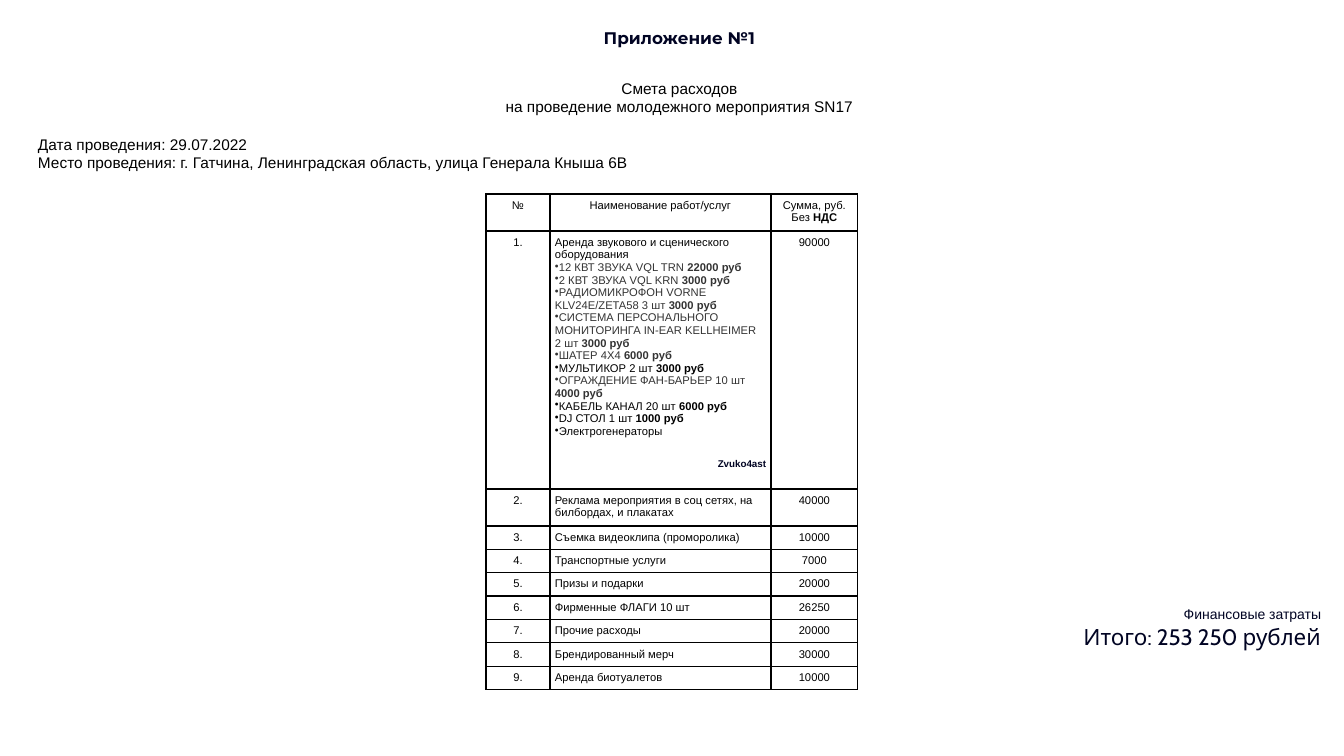
from pptx import Presentation
from pptx.dml.color import RGBColor
from pptx.enum.text import MSO_ANCHOR, PP_ALIGN as Align
from pptx.oxml.ns import qn
from pptx.util import Pt
from lxml.etree import SubElement

PX = 914400 / 100.8
COLORS = {"black": "000000", "gray": "333333", "navy": "010423", "white": "FFFFFF"}


def px(length):
    return round(length * PX)


def write(para, text, size, color="black", font="Arial", align=Align.LEFT, bold=""):
    """Fill a paragraph with plain text and an optional bold ending."""
    para.text = text
    para.alignment = align
    if bold:
        para.add_run().text = bold
    for index, span in enumerate(para.runs):
        span.font.size = Pt(size)
        span.font.name = font
        span.font.bold = index == 1
        span.font.color.rgb = RGBColor.from_string(COLORS[color])


deck = Presentation()
deck.slide_width, deck.slide_height = px(1344), px(756)
page = deck.slides.add_slide(deck.slide_layouts[6])

# Headings, event details and total: top, height, alignment, lines
TEXTS = [
    (28, 21, Align.CENTER, [("Приложение №1", 12, "navy", "Montserrat")]),
    (79, 37, Align.CENTER, [
        ("Смета расходов", 11, "black", "Arial"),
        ("на проведение молодежного мероприятия SN17", 11, "black", "Arial")]),
    (135, 37, Align.LEFT, [
        ("Дата проведения: 29.07.2022", 11, "black", "Arial"),
        ("Место проведения: г. Гатчина, Ленинградская область, улица Генерала Кныша 6В",
         11, "black", "Arial")]),
    (606, 44, Align.RIGHT, [
        ("Финансовые затраты", 10, "navy", "Arial"),
        ("Итого: 253 250 рублей", 16, "navy", "Cabin")]),
]
for top, height, align, lines in TEXTS:
    box = page.shapes.add_textbox(px(28), px(top), px(1303), px(height))
    frame = box.text_frame
    frame.word_wrap = True
    frame.margin_left = frame.margin_right = px(10)
    frame.margin_top = frame.margin_bottom = 0
    for index, (text, size, color, font) in enumerate(lines):
        para = frame.add_paragraph() if index else frame.paragraphs[0]
        write(para, text, size, color, font, align)
        para.runs[0].font.bold = font == "Montserrat"

# Cost table
COSTS = [
    ("Аренда звукового и сценического оборудования", "90000"),
    ("Реклама мероприятия в соц сетях, на билбордах, и плакатах", "40000"),
    ("Съемка видеоклипа (проморолика)", "10000"),
    ("Транспортные услуги", "7000"),
    ("Призы и подарки", "20000"),
    ("Фирменные ФЛАГИ 10 шт", "26250"),
    ("Прочие расходы", "20000"),
    ("Брендированный мерч", "30000"),
    ("Аренда биотуалетов", "10000"),
]
EQUIPMENT = [
    ("12 КВТ ЗВУКА VQL TRN ", "22000 руб", "gray"),
    ("2 КВТ ЗВУКА VQL KRN ", "3000 руб", "gray"),
    ("РАДИОМИКРОФОН VORNE KLV24E/ZETA58 3 шт ", "3000 руб", "gray"),
    ("СИСТЕМА ПЕРСОНАЛЬНОГО МОНИТОРИНГА IN-EAR KELLHEIMER 2 шт ", "3000 руб", "gray"),
    ("ШАТЕР 4Х4 ", "6000 руб", "gray"),
    ("МУЛЬТИКОР 2 шт ", "3000 руб", "black"),
    ("ОГРАЖДЕНИЕ ФАН-БАРЬЕР 10 шт ", "4000 руб", "gray"),
    ("КАБЕЛЬ КАНАЛ 20 шт ", "6000 руб", "black"),
    ("DJ СТОЛ 1 шт ", "1000 руб", "black"),
    ("Электрогенераторы", "", "black"),
]
WIDTHS = [64, 221, 87]
HEIGHTS = [37, 258, 37] + [23] * 7

rows = [("№", "Наименование работ/услуг", "Сумма, руб.")]
rows += [(f"{number}.", name, cost) for number, (name, cost) in enumerate(COSTS, 1)]
table = page.shapes.add_table(len(rows), len(WIDTHS), px(486), px(194),
                              px(sum(WIDTHS)), px(sum(HEIGHTS))).table
table.first_row = table.horz_banding = False
for column, width in zip(table.columns, WIDTHS):
    column.width = px(width)
for row, height in zip(table.rows, HEIGHTS):
    row.height = px(height)

for r, row in enumerate(rows):
    for c, text in enumerate(row):
        cell = table.cell(r, c)
        cell.margin_left = cell.margin_right = px(5)
        cell.margin_top = cell.margin_bottom = px(5)
        cell.vertical_anchor = MSO_ANCHOR.TOP
        for side in ("a:lnL", "a:lnR", "a:lnT", "a:lnB"):
            line = SubElement(cell._tc.get_or_add_tcPr(), qn(side), w=str(Pt(1)))
            fill = SubElement(line, qn("a:solidFill"))
            SubElement(fill, qn("a:srgbClr"), val=COLORS["black"])
        cell.fill.solid()
        cell.fill.fore_color.rgb = RGBColor.from_string(COLORS["white"])
        align = Align.LEFT if r and c == 1 else Align.CENTER
        write(cell.text_frame.paragraphs[0], text, 8, align=align)

write(table.cell(0, 2).text_frame.add_paragraph(), "Без ", 8,
      align=Align.CENTER, bold="НДС")

rental = table.cell(1, 1).text_frame
for item, price, color in EQUIPMENT:
    para = rental.add_paragraph()
    props = para._p.get_or_add_pPr()
    props.set("marL", "0")
    props.set("indent", "0")
    SubElement(props, qn("a:buChar"), char="•")
    write(para, item, 8, color, bold=price)

supplier = rental.add_paragraph()
write(supplier, "Zvuko4ast", 7, "navy", align=Align.RIGHT)
supplier.runs[0].font.bold = True
supplier.space_before = Pt(15)

deck.save("out.pptx")
